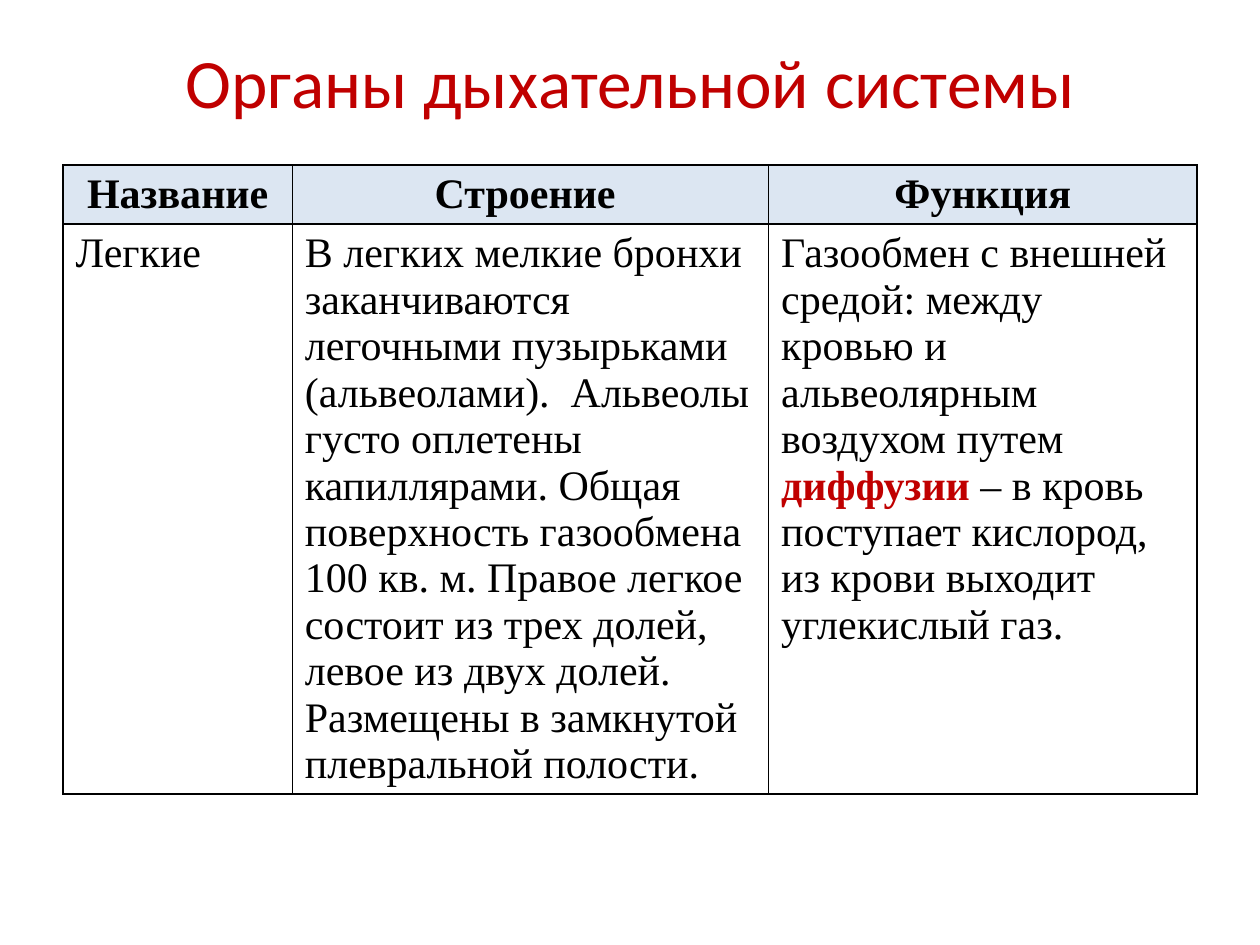
"""Build a slide with a table on the organs of the respiratory system."""
from lxml.etree import SubElement
from pptx import Presentation
from pptx.dml.color import RGBColor as Rgb
from pptx.enum.text import MSO_ANCHOR as Anchor, PP_ALIGN as Align
from pptx.oxml.ns import qn
from pptx.util import Inches, Pt

COLORS = {"text": "000000", "accent": "C00000", "header": "DCE6F2", "border": "000000"}


def add_text(paragraph, text, font="Times New Roman", size=24, color="text", bold=False):
    run = paragraph.add_run()
    run.text = text
    run.font.name = font
    run.font.size = Pt(size)
    run.font.bold = bold
    run.font.color.rgb = Rgb.from_string(COLORS[color])


def add_borders(cell, width=1):
    properties = cell._tc.get_or_add_tcPr()
    for side in ("lnL", "lnR", "lnT", "lnB"):
        line = SubElement(properties, qn(f"a:{side}"), w=str(Pt(width)))
        fill = SubElement(line, qn("a:solidFill"))
        SubElement(fill, qn("a:srgbClr"), val=COLORS["border"])


deck = Presentation()
deck.slide_width, deck.slide_height = Inches(10), Inches(7.5)
slide = deck.slides.add_slide(deck.slide_layouts[5])
margin = int(deck.slide_width * 0.05)
content_width = deck.slide_width - 2 * margin

heading = slide.shapes.title
heading.left, heading.top = margin, int(deck.slide_height * 0.04)
heading.width, heading.height = content_width, Inches(0.69)
heading.text_frame.vertical_anchor = Anchor.MIDDLE
heading.text_frame.paragraphs[0].alignment = Align.CENTER
add_text(heading.text_frame.paragraphs[0], "Органы дыхательной системы",
         font="Calibri", size=39.6, color="accent")

column_widths = [1.82, 3.78, 3.4]
row_heights = [0.47, 4.52]
headers = ["Название", "Строение ", "Функция"]
lungs = [
    [("Легкие", {})],
    [("В легких мелкие бронхи заканчиваются легочными пузырьками (альвеолами).  "
      "Альвеолы густо оплетены капиллярами. Общая поверхность газообмена 100 кв. м. "
      "Правое легкое состоит из трех долей, левое из двух долей. "
      "Размещены в замкнутой плевральной полости.", {})],
    [("Газообмен с внешней средой: между кровью и альвеолярным воздухом путем ", {}),
     ("диффузии ", {"color": "accent", "bold": True}),
     ("– в кровь поступает кислород, из крови выходит углекислый газ.", {})],
]
rows = [[[(header, {"bold": True})] for header in headers], lungs]

organs = slide.shapes.add_table(len(rows), len(headers), margin, Inches(1.31),
                                content_width, Inches(sum(row_heights))).table
organs.first_row = organs.horz_banding = False
for column, width in zip(organs.columns, column_widths):
    column.width = Inches(width)
for row, height in zip(organs.rows, row_heights):
    row.height = Inches(height)

for row_index, row in enumerate(rows):
    for column_index, passages in enumerate(row):
        cell = organs.cell(row_index, column_index)
        add_borders(cell)
        paragraph = cell.text_frame.paragraphs[0]
        if row_index == 0:
            cell.fill.solid()
            cell.fill.fore_color.rgb = Rgb.from_string(COLORS["header"])
            paragraph.alignment = Align.CENTER
        else:
            cell.fill.background()
            paragraph.alignment = Align.LEFT
        for text, style in passages:
            add_text(paragraph, text, **style)

deck.save("out.pptx")
